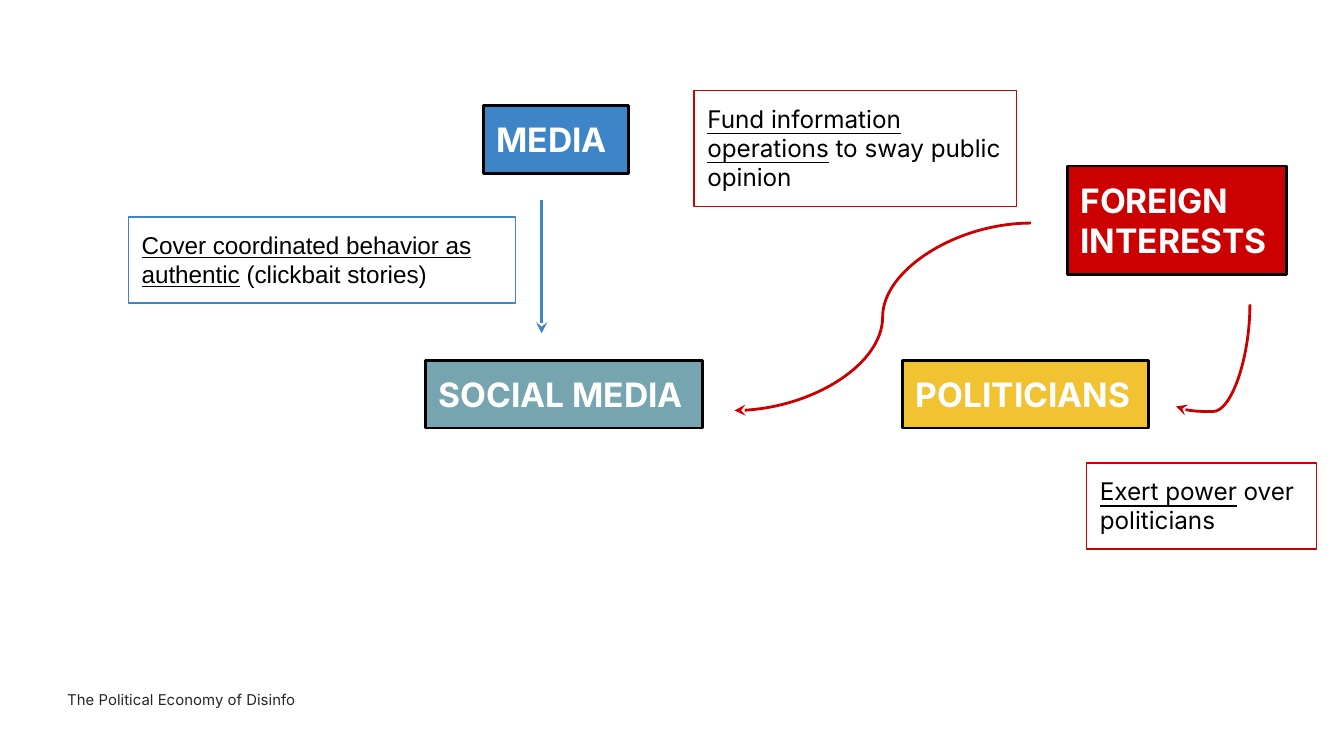
"""Build the slide that maps the political economy of disinformation."""
from dataclasses import dataclass

from lxml.etree import SubElement
from pptx import Presentation
from pptx.dml.color import RGBColor
from pptx.enum.shapes import MSO_CONNECTOR as Connector, MSO_SHAPE as Preset
from pptx.enum.text import MSO_ANCHOR as Anchor, MSO_AUTO_SIZE as AutoSize, PP_ALIGN as Align
from pptx.oxml.ns import qn
from pptx.slide import Slide
from pptx.util import Emu, Pt

PX_PER_INCH = 200
SLIDE_WIDTH, SLIDE_HEIGHT = 2000, 1125
INSET = 20
RED, BLUE, TEAL, YELLOW = "CC0000", "3D85C6", "76A5AF", "F1C232"
BLACK, WHITE, GREY = "000000", "FFFFFF", "262626"


@dataclass(frozen=True)
class Actor:
    name: str
    left: int
    top: int
    width: int
    height: int
    fill: str


@dataclass(frozen=True)
class Note:
    action: str
    detail: str
    left: int
    top: int
    width: int
    height: int
    outline: str
    font: str = "Inter"


@dataclass(frozen=True)
class Arrow:
    kind: Connector
    begin: tuple[int, int]
    end: tuple[int, int]
    color: str
    rotation: int = 0
    bend: float = 0.5


ACTORS = [
    Actor("FOREIGN INTERESTS", 1588, 247, 326, 162, RED),
    Actor("POLITICIANS", 1343, 536, 366, 101, YELLOW),
    Actor("SOCIAL MEDIA", 633, 536, 412, 101, TEAL),
    Actor("MEDIA", 719, 157, 216, 101, BLUE),
]
NOTES = [
    Note("Fund information operations", " to sway public opinion", 1033, 135, 480, 172, RED),
    Note("Exert power", " over politicians", 1617, 689, 342, 128, RED),
    Note("Cover coordinated behavior as authentic", " (clickbait stories)",
         191, 323, 576, 128, BLUE, "Arial"),
]
ARROWS = [
    Arrow(Connector.CURVE, (1534, 332), (1093, 611), RED),
    Arrow(Connector.CURVE, (1729, 474), (1881, 584), RED, rotation=90, bend=1.05),
    Arrow(Connector.STRAIGHT, (806, 298), (806, 496), BLUE),
]


def px(length: int) -> Emu:
    """Turn pixels into EMU."""
    return Emu(length * 914400 // PX_PER_INCH)


def rgb(color: str) -> RGBColor:
    """Turn a hex string into a colour."""
    return RGBColor.from_string(color)


def set_font(paragraph, name: str, size: int, color: str, bold: bool = False) -> None:
    """Set the font shared by all runs of a paragraph."""
    font = paragraph.font
    font.name, font.size, font.bold = name, Pt(size), bold
    font.color.rgb = rgb(color)


def set_frame(frame, inset: int) -> None:
    """Wrap the text from the top with equal insets."""
    frame.word_wrap = True
    frame.vertical_anchor = Anchor.TOP
    frame.margin_left = frame.margin_top = px(inset)
    frame.margin_right = frame.margin_bottom = px(inset)


def add_box(slide: Slide, item: Actor | Note, outline: str, weight: float):
    """Add an outlined rectangle and return it."""
    shape = slide.shapes.add_shape(
        Preset.RECTANGLE, px(item.left), px(item.top), px(item.width), px(item.height))
    shape.shadow.inherit = False
    shape.line.color.rgb = rgb(outline)
    shape.line.width = Pt(weight)
    set_frame(shape.text_frame, INSET)
    shape.text_frame.auto_size = AutoSize.SHAPE_TO_FIT_TEXT
    shape.text_frame.paragraphs[0].alignment = Align.LEFT
    return shape


def add_actor(slide: Slide, actor: Actor) -> None:
    """Add a filled box with the name of an actor."""
    shape = add_box(slide, actor, BLACK, 1.5)
    shape.fill.solid()
    shape.fill.fore_color.rgb = rgb(actor.fill)
    paragraph = shape.text_frame.paragraphs[0]
    paragraph.add_run().text = actor.name
    set_font(paragraph, "Inter", 18, WHITE, bold=True)


def add_note(slide: Slide, note: Note) -> None:
    """Add an unfilled box whose action is underlined."""
    shape = add_box(slide, note, note.outline, 0.75)
    shape.fill.background()
    paragraph = shape.text_frame.paragraphs[0]
    for text, underline in ((note.action, True), (note.detail, False)):
        run = paragraph.add_run()
        run.text = text
        run.font.underline = underline
    set_font(paragraph, note.font, 13, BLACK)


def add_arrow(slide: Slide, arrow: Arrow) -> None:
    """Add a connector with a stealth head at its end."""
    connector = slide.shapes.add_connector(
        arrow.kind, *map(px, arrow.begin), *map(px, arrow.end))
    connector.line.color.rgb = rgb(arrow.color)
    connector.line.width = Pt(1.5)
    properties = connector._element.spPr
    SubElement(properties.find(qn("a:ln")), qn("a:tailEnd"), type="stealth")
    SubElement(properties, qn("a:effectLst"))
    if arrow.rotation:
        properties.find(qn("a:xfrm")).set("rot", str(arrow.rotation * 60000))
    if arrow.kind == Connector.CURVE:
        adjustments = properties.find(qn("a:prstGeom")).get_or_add_avLst()
        SubElement(adjustments, qn("a:gd"), name="adj1", fmla=f"val {round(arrow.bend * 100000)}")


def add_footer(slide: Slide, text: str) -> None:
    """Add the small caption at the bottom left."""
    frame = slide.shapes.add_textbox(px(100), px(1022), px(356), px(62)).text_frame
    set_frame(frame, 0)
    paragraph = frame.paragraphs[0]
    paragraph.add_run().text = text
    paragraph.line_spacing = 1.2
    set_font(paragraph, "Inter", 8, GREY)


def main() -> None:
    """Build and save the presentation."""
    presentation = Presentation()
    presentation.slide_width = px(SLIDE_WIDTH)
    presentation.slide_height = px(SLIDE_HEIGHT)
    slide = presentation.slides.add_slide(presentation.slide_layouts[6])
    for actor in ACTORS:
        add_actor(slide, actor)
    for note in NOTES:
        add_note(slide, note)
    for arrow in ARROWS:
        add_arrow(slide, arrow)
    add_footer(slide, "The Political Economy of Disinfo")
    presentation.save("out.pptx")


if __name__ == "__main__":
    main()
